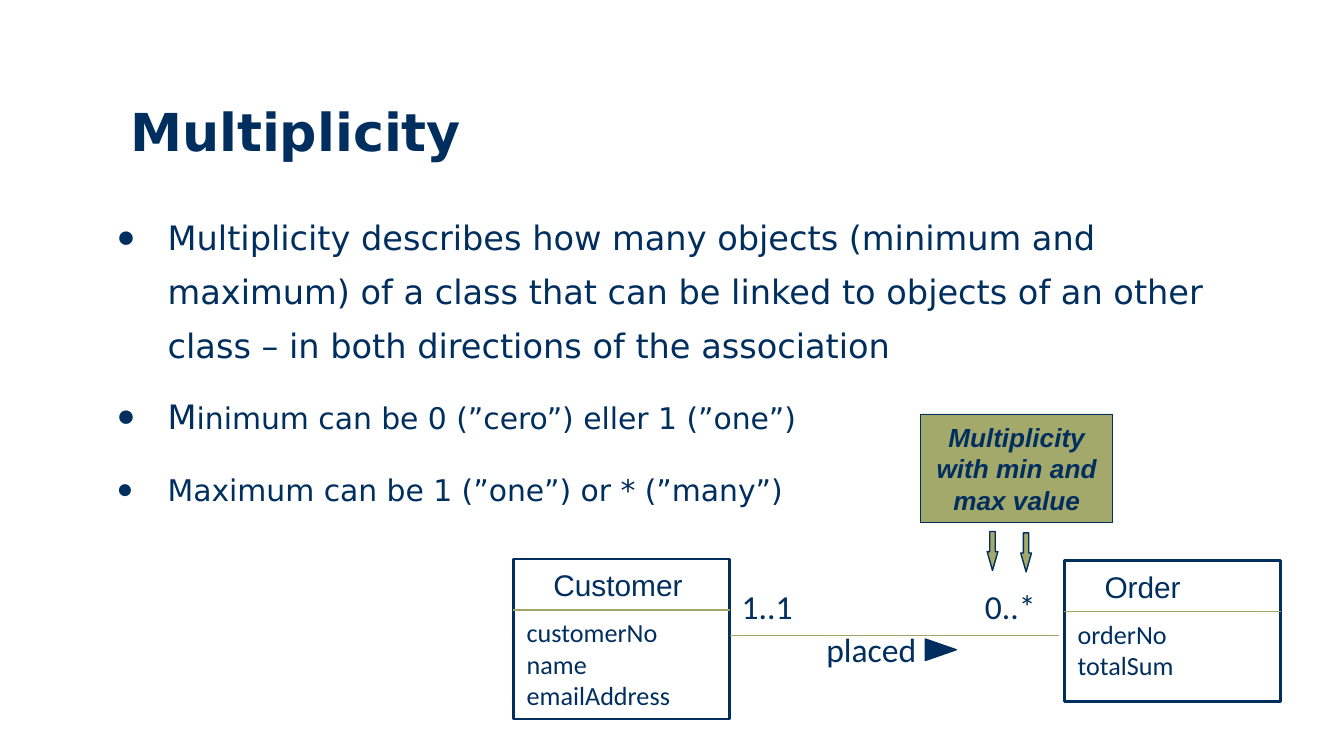
from lxml.etree import SubElement
from pptx import Presentation
from pptx.dml.color import RGBColor
from pptx.enum.shapes import MSO_CONNECTOR, MSO_SHAPE
from pptx.enum.text import MSO_ANCHOR, PP_ALIGN
from pptx.oxml.ns import qn
from pptx.util import Inches, Pt

hues = {"navy": "002F5F", "olive": "A3A86B", "rule": "A1A667", "white": "FFFFFF"}

deck = Presentation()
deck.slide_width = Inches(10)
deck.slide_height = Inches(10) * 9 // 16
slide = deck.slides.add_slide(deck.slide_layouts[6])


def write(box, lines, face, bold=False):
    frame = box.text_frame
    frame.word_wrap = True
    for i, line in enumerate(lines):
        para = frame.paragraphs[0] if i == 0 else frame.add_paragraph()
        for text, size in line:
            run = para.add_run()
            run.text = text
            run.font.size = Pt(size)
            run.font.name = face
            run.font.bold = bold
            run.font.color.rgb = RGBColor.from_string(hues["navy"])
    return frame


def draw(kind, place, fill, width, turn=0):
    shape = slide.shapes.add_shape(kind, *map(Inches, place))
    shape.shadow.inherit = False
    shape.fill.solid()
    shape.fill.fore_color.rgb = RGBColor.from_string(hues[fill])
    shape.line.color.rgb = RGBColor.from_string(hues["navy"])
    shape.line.width = Pt(width)
    shape.rotation = turn
    return shape


points = [
    [("Multiplicity describes how many objects (minimum and maximum) of a class "
      "that can be linked to objects of an other class – in both directions of "
      "the association", 18)],
    [("M", 18), ("inimum can be 0 (”cero”) eller 1 (”one”)", 16)],
    [("Maximum can be 1 (”one”) or * (”many”)", 16)],
]
body = slide.shapes.add_textbox(Inches(0.77), Inches(1.46), Inches(8.74), Inches(3.54))
frame = write(body, points, "DejaVu Sans")
for i, para in enumerate(frame.paragraphs):
    props = para._p.get_or_add_pPr()
    props.set("marL", str(Inches(0.38)))
    props.set("indent", str(-Inches(0.38)))
    SubElement(props, qn("a:buSzPct")).set("val", "93000")
    SubElement(props, qn("a:buFont")).set("typeface", "Arial")
    SubElement(props, qn("a:buChar")).set("char", "●")
    para.line_spacing = Pt(29)
    if i:
        para.space_before = Pt(9)

title = slide.shapes.add_textbox(Inches(0.87), Inches(0.69), Inches(9.13), Inches(0.65))
write(title, [[("Multiplicity", 28)]], "DejaVu Sans", True)

rules = [(5.43, 7.88, 4.73)]
tables = [
    ("Customer", 3.82, 4.16, 1.19, ["customerNo", "name", "emailAddress"]),
    ("Order", 7.92, 4.17, 1.05, ["orderNo", "totalSum"]),
]
for name, left, top, high, fields in tables:
    draw(MSO_SHAPE.RECTANGLE, (left, top, 1.61, high), "white", 1.5)
    head = slide.shapes.add_textbox(Inches(left + 0.2), Inches(top + 0.01), Inches(1.57), Inches(0.37))
    write(head, [[(name, 16)]], "Arial")
    split = top + 0.38
    rules.append((left, left + 1.61, split))
    list_box = slide.shapes.add_textbox(Inches(left), Inches(split), Inches(1.29), Inches(high - 0.38))
    write(list_box, [[(field, 14)] for field in fields], "Calibri")

for start, end, y in rules:
    rule = slide.shapes.add_connector(
        MSO_CONNECTOR.STRAIGHT, Inches(start), Inches(y), Inches(end), Inches(y))
    rule.line.color.rgb = RGBColor.from_string(hues["rule"])
    rule.line.width = Pt(0.75)
    SubElement(rule._element.spPr, qn("a:effectLst"))

for text, left, top, wide in [("placed", 6.05, 4.63, 1.73), ("0..*", 7.23, 4.31, 0.95), ("1..1", 5.42, 4.31, 0.95)]:
    label = slide.shapes.add_textbox(Inches(left), Inches(top), Inches(wide), Inches(0.4))
    write(label, [[(text, 18)]], "Calibri")

draw(MSO_SHAPE.ISOSCELES_TRIANGLE, (6.92, 4.72, 0.16, 0.23), "navy", 0.75, 90)

for left, top in [(7.24, 4.06), (7.49, 4.07)]:
    arrow = draw(MSO_SHAPE.LEFT_ARROW, (left, top, 0.29, 0.08), "olive", 0.75, 270)
    arrow.adjustments[1] = 1.76

note = draw(MSO_SHAPE.RECTANGLE, (6.85, 3.08, 1.43, 0.81), "olive", 0.25)
frame = write(note, [[("Multiplicity with min and max value", 14)]], "Arial", True)
frame.vertical_anchor = MSO_ANCHOR.MIDDLE
frame.paragraphs[0].alignment = PP_ALIGN.CENTER
frame.paragraphs[0].runs[0].font.italic = True

deck.save("out.pptx")
